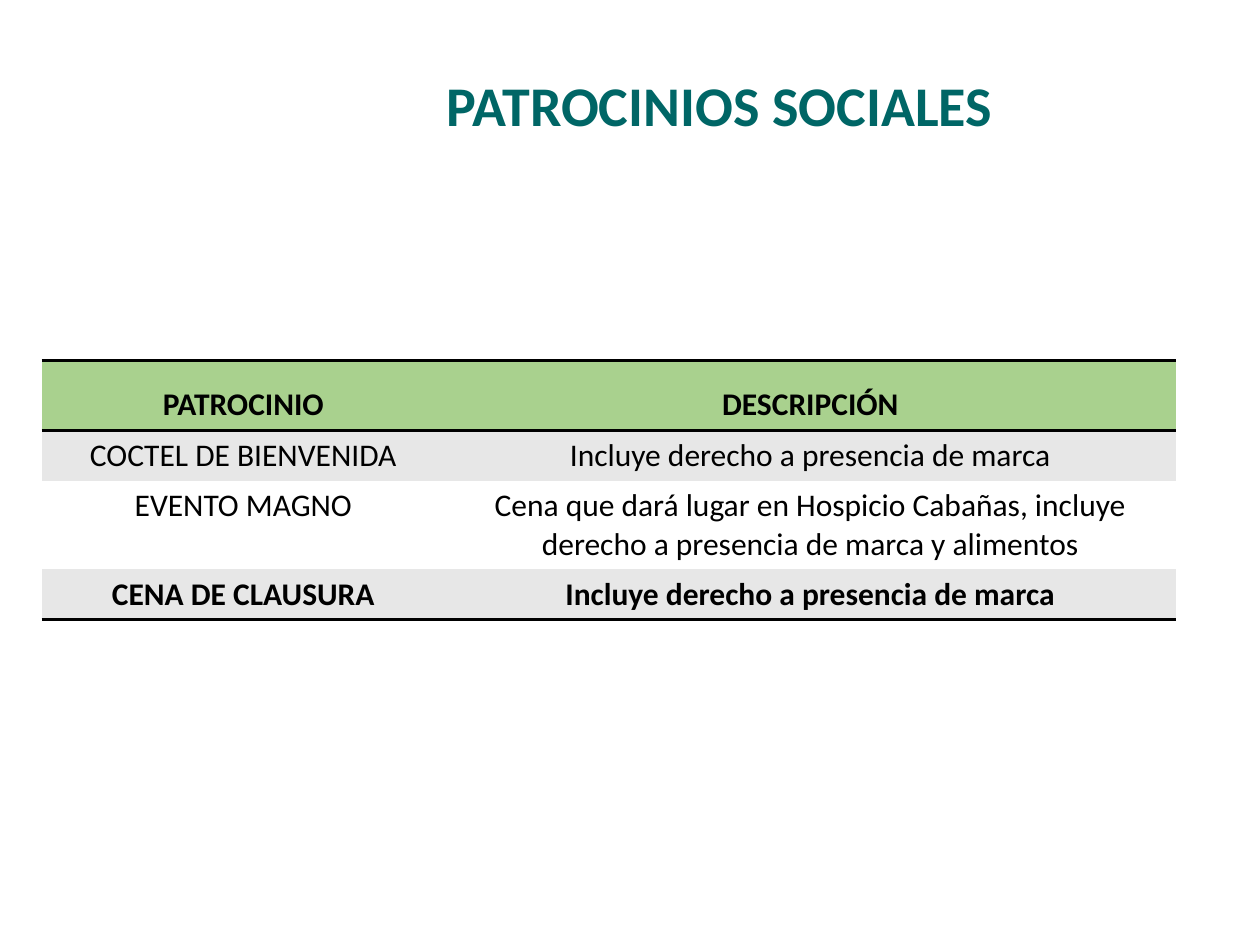
import pptx
import pptx.dml.color
import pptx.enum.text
import pptx.oxml
import pptx.oxml.ns
import pptx.util

Cm = pptx.util.Cm
Pt = pptx.util.Pt


def color(value):
    return pptx.dml.color.RGBColor.from_string(value)


class Deck:
    font = "Calibri"
    black = "000000"
    teal = "006666"
    green = "A9D18E"
    bands = ("E7E7E7", "FFFFFF")
    rule = 2

    def __init__(self, width, height):
        self.prs = pptx.Presentation()
        self.prs.slide_width = Cm(width)
        self.prs.slide_height = Cm(height)
        self.s = self.prs.slides.add_slide(self.prs.slide_layouts[6])

    def fill_text(self, tf, text, size, rgb, bold, spacing=1.0):
        tf.word_wrap = True
        p = tf.paragraphs[0]
        p.alignment = pptx.enum.text.PP_ALIGN.CENTER
        p.line_spacing = spacing
        r = p.add_run()
        r.text = text
        style = {"name": self.font, "size": Pt(size), "bold": bold}
        for key, value in style.items():
            setattr(r.font, key, value)
        r.font.color.rgb = color(rgb)

    def text(self, left, top, width, height, text, size, rgb):
        sp = self.s.shapes.add_textbox(Cm(left), Cm(top), Cm(width), Cm(height))
        self.fill_text(sp.text_frame, text, size, rgb, True)

    def borders(self, cell, ruled):
        tcPr = cell._tc.get_or_add_tcPr()
        for side in "LRTB":
            fill = "<a:noFill/>"
            if side in ruled:
                fill = f'<a:solidFill><a:srgbClr val="{self.black}"/></a:solidFill>'
            tcPr.append(pptx.oxml.parse_xml(
                f'<a:ln{side} {pptx.oxml.ns.nsdecls("a")} w="{Pt(self.rule)}">'
                f"{fill}</a:ln{side}>"))

    def table(self, left, top, widths, heights, rows):
        table = self.s.shapes.add_table(
            len(rows), len(widths), Cm(left), Cm(top),
            Cm(sum(widths)), Cm(sum(heights))).table
        for flag in ("first_row", "horz_banding"):
            setattr(table, flag, False)
        for column, width in zip(table.columns, widths):
            column.width = Cm(width)
        last = len(rows) - 1
        for i, (row, height) in enumerate(zip(rows, heights)):
            table.rows[i].height = Cm(height)
            header = i == 0
            ruled = "TB" if header else "T" if i == 1 else "B" if i == last else ""
            fill = self.green if header else self.bands[(i - 1) % 2]
            for j, text in enumerate(row):
                cell = table.cell(i, j)
                self.borders(cell, ruled)
                cell.fill.solid()
                cell.fill.fore_color.rgb = color(fill)
                self.fill_text(cell.text_frame, text, 18, self.black,
                               i in (0, last), 1.5 if header else 1.0)


def main():
    deck = Deck(25.4, 19.05)
    deck.text(5.61, 1.3, 17.8, 1.62, "PATROCINIOS SOCIALES", 32, deck.teal)
    deck.table(0.84, 7.26, (8.13, 14.73), (1.41, 1.01, 1.79, 1.01), [
        ("PATROCINIO", "DESCRIPCIÓN"),
        ("COCTEL DE BIENVENIDA", "Incluye derecho a presencia de marca"),
        ("EVENTO MAGNO", "Cena que dará lugar en Hospicio Cabañas, "
         "incluye derecho a presencia de marca y alimentos"),
        ("CENA DE CLAUSURA", "Incluye derecho a presencia de marca"),
    ])
    deck.prs.save("out.pptx")


if __name__ == "__main__":
    main()
